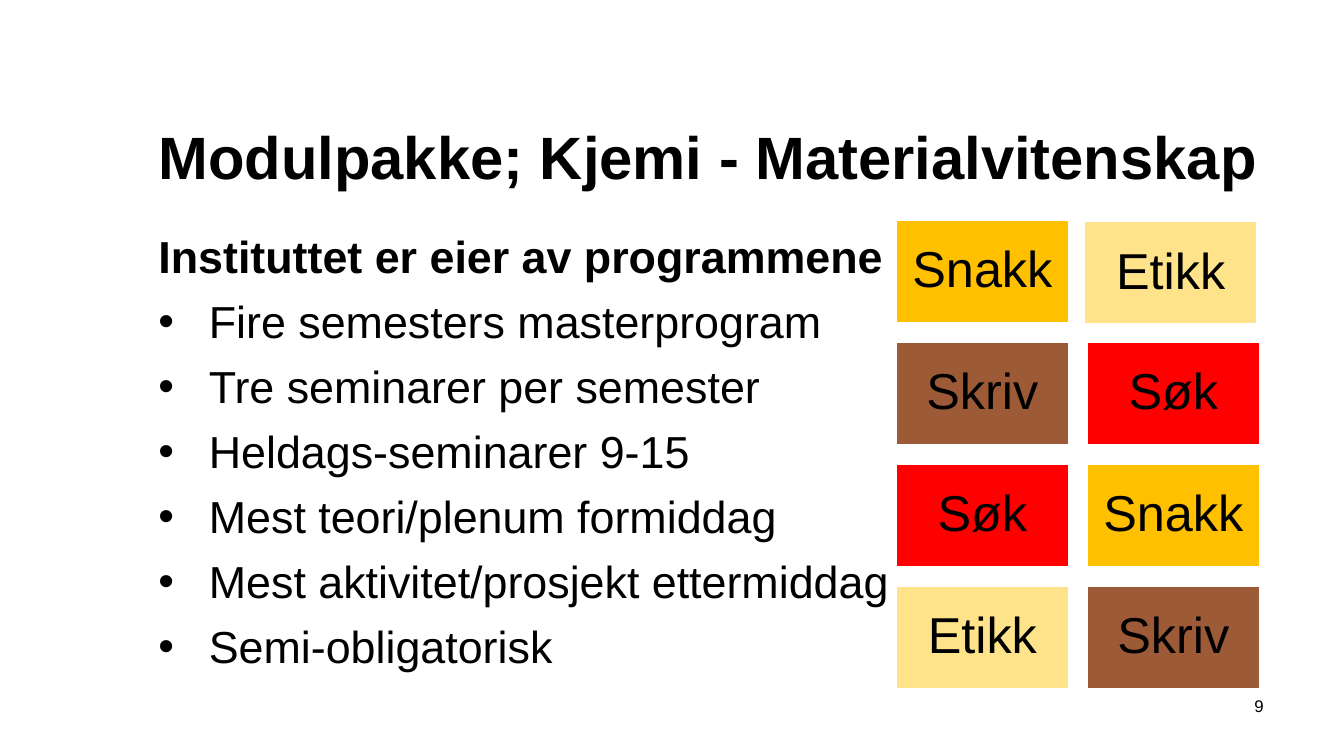
from dataclasses import dataclass

from lxml.etree import SubElement
from pptx import Presentation
from pptx.dml.color import RGBColor
from pptx.enum.shapes import MSO_SHAPE as Preset
from pptx.enum.text import MSO_ANCHOR as Anchor, PP_ALIGN as Align
from pptx.oxml.ns import qn
from pptx.slide import Slide
from pptx.text.text import TextFrame, _Paragraph as Paragraph
from pptx.util import Pt

FONT = "Arial"
COLORS = {
    "text": "000000",
    "border": "FFFFFF",
    "Snakk": "FFC000",
    "Etikk": "FFE38B",
    "Skriv": "9C5A36",
    "Søk": "FF0000",
}
HEADING = "Instituttet er eier av programmene"
BULLETS = [
    "Fire semesters masterprogram",
    "Tre seminarer per semester",
    "Heldags-seminarer 9-15",
    "Mest teori/plenum formiddag",
    "Mest aktivitet/prosjekt ettermiddag",
    "Semi-obligatorisk",
]
MODULE_ROWS = [("Snakk", "Etikk"), ("Skriv", "Søk"), ("Søk", "Snakk"), ("Etikk", "Skriv")]
COLUMN_LEFTS = (479.5, 581.8)
GRID_TOP = 117.4
ROW_STEP = 65.3
TILE_WIDTH = 93.6
TILE_HEIGHT = 56.2
TILE_INSET = 7.6
TILE_NUDGES = {(0, 1): (-1.4, 0.7)}
BULLET_INDENT = 27


@dataclass(frozen=True)
class Box:
    left: float
    top: float
    width: float
    height: float

    def lengths(self) -> tuple[Pt, Pt, Pt, Pt]:
        return Pt(self.left), Pt(self.top), Pt(self.width), Pt(self.height)


@dataclass(frozen=True)
class ModuleTile:
    name: str
    box: Box


def color(name: str) -> RGBColor:
    return RGBColor.from_string(COLORS[name])


def add_run(paragraph: Paragraph, text: str, size: float, bold: bool = False) -> None:
    run = paragraph.add_run()
    run.text = text
    run.font.name = FONT
    run.font.size = Pt(size)
    run.font.bold = bold
    run.font.color.rgb = color("text")


def add_text_frame(slide: Slide, box: Box, anchor: Anchor = Anchor.TOP) -> TextFrame:
    frame = slide.shapes.add_textbox(*box.lengths()).text_frame
    frame.word_wrap = True
    frame.vertical_anchor = anchor
    return frame


def set_bullet(paragraph: Paragraph) -> None:
    properties = paragraph._p.get_or_add_pPr()
    properties.set("marL", str(Pt(BULLET_INDENT)))
    properties.set("indent", str(-Pt(BULLET_INDENT)))
    SubElement(properties, qn("a:buFont")).set("typeface", FONT)
    SubElement(properties, qn("a:buChar")).set("char", "•")


def add_body(slide: Slide) -> None:
    frame = add_text_frame(slide, Box(77.8, 116.6, 606, 243.4))
    frame.margin_top = Pt(6)
    add_run(frame.paragraphs[0], HEADING, 24, bold=True)
    for text in BULLETS:
        paragraph = frame.add_paragraph()
        set_bullet(paragraph)
        paragraph.space_before = Pt(6)
        add_run(paragraph, text, 24)


def module_tiles() -> list[ModuleTile]:
    tiles = []
    for row, names in enumerate(MODULE_ROWS):
        for column, name in enumerate(names):
            shift_x, shift_y = TILE_NUDGES.get((row, column), (0, 0))
            left = COLUMN_LEFTS[column] + shift_x
            top = GRID_TOP + row * ROW_STEP + shift_y
            tiles.append(ModuleTile(name, Box(left, top, TILE_WIDTH, TILE_HEIGHT)))
    return tiles


def add_tile(slide: Slide, tile: ModuleTile) -> None:
    shape = slide.shapes.add_shape(Preset.RECTANGLE, *tile.box.lengths())
    shape.shadow.inherit = False
    shape.fill.solid()
    shape.fill.fore_color.rgb = color(tile.name)
    shape.line.color.rgb = color("border")
    shape.line.width = Pt(2)
    frame = shape.text_frame
    frame.word_wrap = True
    frame.vertical_anchor = Anchor.MIDDLE
    frame.margin_left = frame.margin_right = Pt(TILE_INSET)
    frame.margin_top = frame.margin_bottom = Pt(TILE_INSET)
    paragraph = frame.paragraphs[0]
    paragraph.alignment = Align.CENTER
    paragraph.line_spacing = 0.9
    add_run(paragraph, tile.name, 27)


def main() -> None:
    presentation = Presentation()
    presentation.slide_width = Pt(720)
    presentation.slide_height = Pt(405)
    slide = presentation.slides.add_slide(presentation.slide_layouts[6])

    title = add_text_frame(slide, Box(77.8, 49.7, 606, 67.7), Anchor.MIDDLE)
    add_run(title.paragraphs[0], "Modulpakke; Kjemi - Materialvitenskap", 32, bold=True)
    add_body(slide)

    page_number = add_text_frame(slide, Box(630, 369, 54, 27)).paragraphs[0]
    page_number.alignment = Align.RIGHT
    add_run(page_number, "9", 9)

    for tile in module_tiles():
        add_tile(slide, tile)
    presentation.save("out.pptx")


if __name__ == "__main__":
    main()
